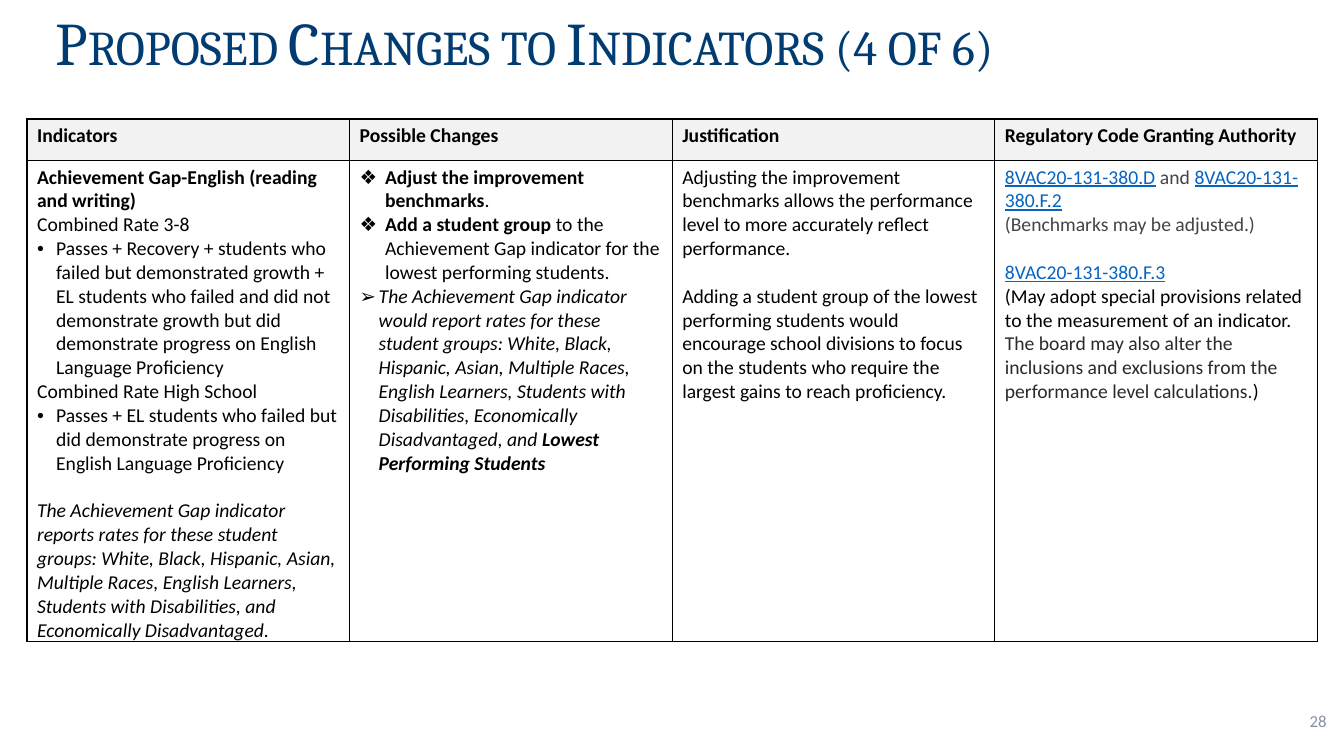
"""Build the slide on proposed changes to the achievement gap indicator."""
from dataclasses import dataclass

from lxml import etree
from pptx import Presentation
from pptx.dml.color import RGBColor
from pptx.enum.text import MSO_ANCHOR, MSO_AUTO_SIZE, PP_ALIGN
from pptx.oxml.ns import qn
from pptx.util import Cm, Pt

LEFT, RIGHT = PP_ALIGN.LEFT, PP_ALIGN.RIGHT
MIDDLE, BOTTOM = MSO_ANCHOR.MIDDLE, MSO_ANCHOR.BOTTOM
NO_AUTOFIT = MSO_AUTO_SIZE.NONE

BLACK = RGBColor(0x00, 0x00, 0x00)
NAVY = RGBColor(0x00, 0x3C, 0x71)
SLATE = RGBColor(0x88, 0x8F, 0xA3)
HEADER_GREY = RGBColor(0xF2, 0xF2, 0xF2)
LINK_BLUE = RGBColor(0x05, 0x63, 0xC1)
GREY = RGBColor(0x44, 0x44, 0x44)
CHARCOAL = RGBColor(0x2A, 0x2A, 0x2A)

TITLE_ONLY = 5
BODY_SIZE = Pt(14)
BLANK_LINE = Pt(17)
COLUMN_WIDTH = Cm(8.13)
ROW_HEIGHTS = (Cm(1.04), Cm(12.09))


@dataclass(frozen=True)
class Span:
    """A stretch of text in one format."""

    text: str
    bold: bool = False
    italic: bool = False
    underline: bool = False
    color: RGBColor = BLACK


@dataclass(frozen=True)
class Para:
    """A paragraph with an optional bullet and gap above."""

    spans: tuple[Span, ...]
    bullet: str = ""
    indent: Cm = Cm(0.48)
    gap: Pt = Pt(0)


def plain(text: str, **options) -> Para:
    """Return a paragraph of one regular span."""
    return Para((Span(text),), **options)


def link(text: str) -> Span:
    """Return a span that looks like a link."""
    return Span(text, underline=True, color=LINK_BLUE)


HEADERS = ("Indicators", "Possible Changes", "Justification", "Regulatory Code Granting Authority")
INDICATORS = (
    Para((Span("Achievement Gap-English (reading and writing)", bold=True),)),
    plain("Combined Rate 3-8"),
    plain("Passes + Recovery + students who failed but demonstrated growth + EL students who failed "
          "and did not demonstrate growth but did demonstrate progress on English Language Proficiency",
          bullet="•"),
    plain("Combined Rate High School"),
    plain("Passes + EL students who failed but did demonstrate progress on English Language Proficiency",
          bullet="•"),
    Para((Span("The Achievement Gap indicator reports rates for these student groups: White, Black, "
               "Hispanic, Asian, Multiple Races, English Learners, Students with Disabilities, and "
               "Economically Disadvantaged.", italic=True),), gap=BLANK_LINE),
)
CHANGES = (
    Para((Span("Adjust the improvement benchmarks", bold=True), Span(".")), "❖", Cm(0.64)),
    Para((Span("Add a student group ", bold=True),
          Span("to the Achievement Gap indicator for the lowest performing students.")), "❖", Cm(0.64)),
    Para((Span("The Achievement Gap indicator would report rates for these student groups: White, Black, "
               "Hispanic, Asian, Multiple Races, English Learners, Students with Disabilities, "
               "Economically Disadvantaged, and ", italic=True),
          Span("Lowest Performing Students", bold=True, italic=True)), "➢"),
)
JUSTIFICATION = (
    plain("Adjusting the improvement"),
    plain("benchmarks allows the performance"),
    plain("level to more accurately reflect"),
    plain("performance."),
    plain("Adding a student group of the lowest performing students would encourage school divisions "
          "to focus on the students who require the largest gains to reach proficiency.",
          gap=BLANK_LINE),
)
AUTHORITY = (
    Para((link("8VAC20-131-380.D"), Span(" and ", color=GREY), link("8VAC20-131-380.F.2"))),
    Para((Span("(Benchmarks may be adjusted.)", color=GREY),)),
    Para((link("8VAC20-131-380.F.3"),), gap=BLANK_LINE),
    Para((Span("(May adopt special provisions related to the measurement of an indicator. "),
          Span("The board may also alter the inclusions and exclusions from the performance "
               "level calculations.", color=CHARCOAL),
          Span(")"))),
)
ROWS = (
    tuple((Para((Span(header, bold=True),)),) for header in HEADERS),
    (INDICATORS, CHANGES, JUSTIFICATION, AUTHORITY),
)


def apply(target, formats: dict) -> None:
    """Set each named attribute on the target."""
    for name, value in formats.items():
        setattr(target, name, value)


def add_bullet(paragraph, para: Para) -> None:
    """Give a paragraph a hanging black bullet."""
    properties = paragraph._p.get_or_add_pPr()
    properties.set("marL", str(para.indent))
    properties.set("indent", str(-para.indent))
    color = etree.SubElement(properties, qn("a:buClr"))
    etree.SubElement(color, qn("a:srgbClr"), val=str(BLACK))
    etree.SubElement(properties, qn("a:buFont"), typeface="Arial")
    etree.SubElement(properties, qn("a:buChar"), char=para.bullet)


def write_paras(frame, paras: tuple[Para, ...]) -> None:
    """Write formatted paragraphs into a text frame."""
    for index, para in enumerate(paras):
        paragraph = frame.add_paragraph() if index else frame.paragraphs[0]
        apply(paragraph, {"alignment": LEFT, "space_before": para.gap})
        if para.bullet:
            add_bullet(paragraph, para)
        for span in para.spans:
            run = paragraph.add_run()
            run.text = span.text
            run.font.color.rgb = span.color
            apply(run.font, {"name": "Calibri", "size": BODY_SIZE, "bold": span.bold,
                             "italic": span.italic, "underline": span.underline})


def add_borders(cell) -> None:
    """Draw a thin black line on all sides of a cell."""
    properties = cell._tc.get_or_add_tcPr()
    for side in ("lnL", "lnR", "lnT", "lnB"):
        line = etree.SubElement(properties, qn(f"a:{side}"), w=str(Pt(1)))
        fill = etree.SubElement(line, qn("a:solidFill"))
        etree.SubElement(fill, qn("a:srgbClr"), val=str(BLACK))


def add_indicator_table(page) -> None:
    """Add the table of indicators and changes."""
    table = page.shapes.add_table(len(ROWS), len(HEADERS), Cm(0.68), Cm(3), COLUMN_WIDTH * len(HEADERS),
                                  sum(ROW_HEIGHTS)).table
    apply(table, {"first_row": False, "horz_banding": False})
    for column in table.columns:
        column.width = COLUMN_WIDTH
    for row_index, (height, contents) in enumerate(zip(ROW_HEIGHTS, ROWS)):
        table.rows[row_index].height = height
        for column_index, paras in enumerate(contents):
            cell = table.cell(row_index, column_index)
            add_borders(cell)
            if row_index:
                cell.fill.background()
            else:
                cell.fill.solid()
                cell.fill.fore_color.rgb = HEADER_GREY
            write_paras(cell.text_frame, paras)


def format_title(page) -> None:
    """Place and format the title in small capitals."""
    title = page.shapes.title
    apply(title, {"left": Cm(-0.89), "top": Cm(-0.51), "width": Cm(33.87), "height": Cm(2.62)})
    frame = title.text_frame
    frame.text = "Proposed Changes to Indicators (4 of 6)"
    apply(frame, {"vertical_anchor": BOTTOM, "auto_size": NO_AUTOFIT, "word_wrap": True,
                  "margin_left": Cm(2.29), "margin_right": Cm(0.25),
                  "margin_top": Cm(0.13), "margin_bottom": Cm(0.13)})
    paragraph = frame.paragraphs[0]
    apply(paragraph, {"alignment": LEFT, "line_spacing": 0.9})
    font = paragraph.runs[0].font
    apply(font, {"name": "Cambria", "size": Pt(43.2)})
    font.color.rgb = NAVY
    font._element.set("cap", "small")


def add_page_number(page) -> None:
    """Add the page number at the lower right."""
    frame = page.shapes.add_textbox(Cm(26.06), Cm(17.65), Cm(7.62), Cm(1.02)).text_frame
    frame.text = "28"
    apply(frame, {"word_wrap": True, "vertical_anchor": MIDDLE})
    paragraph = frame.paragraphs[0]
    paragraph.alignment = RIGHT
    apply(paragraph.runs[0].font, {"name": "Calibri", "size": Pt(12)})
    paragraph.runs[0].font.color.rgb = SLATE


def main() -> None:
    """Build and save the deck."""
    deck = Presentation()
    apply(deck, {"slide_width": Cm(33.87), "slide_height": Cm(19.05)})
    page = deck.slides.add_slide(deck.slide_layouts[TITLE_ONLY])
    format_title(page)
    add_page_number(page)
    add_indicator_table(page)
    deck.save("out.pptx")


if __name__ == "__main__":
    main()
